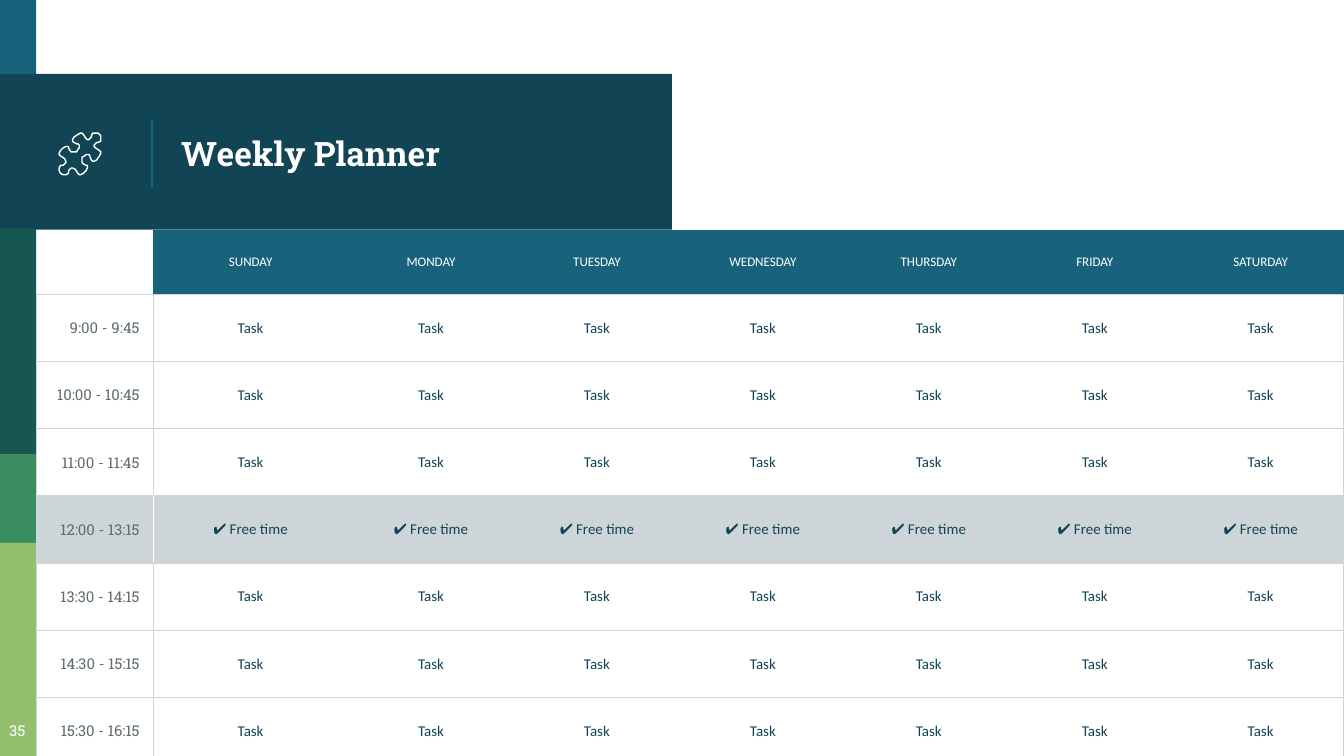
from lxml import etree
from pptx import Presentation
from pptx.dml.color import RGBColor
from pptx.enum import shapes, text
from pptx.oxml import ns
from pptx.util import Inches, Pt

BLUE, NAVY, GRAY, SLATE, WHITE = "18637B", "114454", "CED5D8", "5F6C70", "FFFFFF"
SERIF, SANS = "Roboto Slab", "Calibri"
CENTER, RIGHT = text.PP_ALIGN.CENTER, text.PP_ALIGN.RIGHT
NO_GRID_STYLE = "{2D5ABB26-0587-4C30-8999-92F81FD0307C}"

# left, top, width, height, colour
BANDS = [
    (0, 0, 0.27, 0.58, BLUE),
    (0, 0.55, 5, 1.16, NAVY),
    (0, 1.7, 0.27, 1.68, "165751"),
    (0, 3.38, 0.27, 0.66, "3B8D61"),
    (0, 4.04, 0.27, 1.59, "94BF6E"),
]
DAYS = ["SUNDAY", "MONDAY", "TUESDAY", "WEDNESDAY", "THURSDAY", "FRIDAY", "SATURDAY"]
BREAK = "12:00 - 13:15"
TIMES = ["9:00 - 9:45", "10:00 - 10:45", "11:00 - 11:45", BREAK,
         "13:30 - 14:15", "14:30 - 15:15", "15:30 - 16:15"]

# Half of the puzzle outline, in hundredths of an inch; the rest is its mirror.
PUZZLE_SIZE = 31
PUZZLE_HALF = [
    (30, 1), (29, 0), (27, 0), (25, 0), (24, 2), (24, 3), (23, 4), (22, 5),
    (21, 5), (20, 4), (18, 1), (17, 0), (16, 0), (14, 1), (11, 3), (10, 5),
    (10, 6), (11, 7), (13, 8), (14, 8), (15, 9), (15, 11), (14, 12), (13, 14),
    (11, 14), (9, 14), (8, 13), (7, 11), (7, 10), (6, 10), (5, 10), (3, 11),
    (1, 13), (0, 15), (0, 16), (1, 17), (4, 19), (5, 21), (5, 22), (4, 23),
    (3, 24), (1, 24), (0, 26), (0, 27), (0, 28), (1, 30),
]


def rgb(color):
    return RGBColor.from_string(color)


def add_band(slide, left, top, width, height, color):
    band = slide.shapes.add_shape(shapes.MSO_SHAPE.RECTANGLE, Inches(left),
                                  Inches(top), Inches(width), Inches(height))
    band.shadow.inherit = False
    band.fill.solid()
    band.fill.fore_color.rgb = rgb(color)
    band.line.fill.background()


def add_divider(slide, x, top, bottom):
    divider = slide.shapes.add_connector(shapes.MSO_CONNECTOR.STRAIGHT, Inches(x),
                                         Inches(top), Inches(x), Inches(bottom))
    divider.line.color.rgb = rgb(BLUE)
    divider.line.width = Pt(0.75)
    etree.SubElement(divider._element.spPr, ns.qn("a:effectLst"))


def add_puzzle(slide, left, top):
    mirrored = [(PUZZLE_SIZE - y, PUZZLE_SIZE - x) for x, y in reversed(PUZZLE_HALF)]
    outline = PUZZLE_HALF + mirrored
    builder = slide.shapes.build_freeform(*outline[0], scale=Inches(0.01))
    builder.add_line_segments(outline[1:], close=True)
    puzzle = builder.convert_to_shape(Inches(left), Inches(top))
    puzzle.shadow.inherit = False
    puzzle.fill.background()
    puzzle.line.color.rgb = rgb(WHITE)
    puzzle.line.width = Pt(0.75)


def set_text(text_frame, words, size, font, color, align=None, bold=False):
    text_frame.text = words
    paragraph = text_frame.paragraphs[0]
    paragraph.alignment = align
    for run in paragraph.runs:
        run.font.size = Pt(size)
        run.font.name = font
        run.font.bold = bold
        run.font.color.rgb = rgb(color)


def set_margins(target):
    target.margin_left = target.margin_right = Inches(0.1)
    target.margin_top = target.margin_bottom = Inches(0.1)


def add_label(slide, left, top, width, height, anchor, *style, **options):
    label = slide.shapes.add_textbox(Inches(left), Inches(top),
                                     Inches(width), Inches(height))
    frame = label.text_frame
    frame.word_wrap = True
    frame.vertical_anchor = anchor
    set_margins(frame)
    set_text(frame, *style, **options)


def set_borders(cell, **sides):
    """Draw the given sides (L, R, T, B), each in its own colour, and clear the others."""
    properties = cell._tc.get_or_add_tcPr()
    for side in "LRTB":
        line = etree.SubElement(properties, ns.qn("a:ln" + side), w=str(Pt(0.75)))
        if side in sides:
            fill = etree.SubElement(line, ns.qn("a:solidFill"))
            etree.SubElement(fill, ns.qn("a:srgbClr"), val=sides[side])
        else:
            etree.SubElement(line, ns.qn("a:noFill"))


def fill_cell(cell, color, *style):
    cell.vertical_anchor = text.MSO_ANCHOR.MIDDLE
    set_margins(cell)
    set_text(cell.text_frame, *style)
    if color:
        cell.fill.solid()
        cell.fill.fore_color.rgb = rgb(color)
    else:
        cell.fill.background()


def add_planner(slide, left, top):
    time_width, sunday_width = 0.87, 1.45
    day_width = (10 - left - time_width - sunday_width) / (len(DAYS) - 1)
    widths = [time_width, sunday_width] + [day_width] * (len(DAYS) - 1)
    heights = [0.48] + [0.5] * len(TIMES)
    frame = slide.shapes.add_table(len(heights), len(widths), Inches(left), Inches(top),
                                   Inches(sum(widths)), Inches(sum(heights)))
    table = frame.table
    table.first_row = table.horz_banding = False
    table._tbl.tblPr.find(ns.qn("a:tableStyleId")).text = NO_GRID_STYLE
    for column, width in zip(table.columns, widths):
        column.width = Inches(width)
    for row, height in zip(table.rows, heights):
        row.height = Inches(height)

    set_borders(table.cell(0, 0), B=GRAY)
    table.cell(0, 0).fill.background()
    for column, day in enumerate(DAYS, 1):
        cell = table.cell(0, column)
        set_borders(cell, B=GRAY)
        fill_cell(cell, BLUE, day, 7, SANS, WHITE, CENTER)

    for row, time in enumerate(TIMES, 1):
        is_break = time == BREAK
        color, inner = (GRAY, WHITE) if is_break else (None, GRAY)
        task = "✔ Free time" if is_break else "Task"
        cell = table.cell(row, 0)
        set_borders(cell, L=GRAY, R=inner, T=GRAY, B=GRAY)
        fill_cell(cell, color, time, 8, SERIF, SLATE, RIGHT)
        for column in range(1, len(widths)):
            sides = {"T": GRAY, "B": GRAY}
            if column == 1:
                sides["L"] = inner
            if column == len(DAYS):
                sides["R"] = GRAY
            cell = table.cell(row, column)
            set_borders(cell, **sides)
            fill_cell(cell, color, task, 8, SANS, NAVY, CENTER)


def main():
    presentation = Presentation()
    presentation.slide_width = Inches(10)
    presentation.slide_height = Inches(10) * 9 // 16
    slide = presentation.slides.add_slide(presentation.slide_layouts[6])
    for band in BANDS:
        add_band(slide, *band)
    add_divider(slide, 1.13, 0.89, 1.4)
    add_label(slide, 1.25, 0.58, 3.51, 1.12, text.MSO_ANCHOR.MIDDLE,
              "Weekly Planner", 18, SERIF, WHITE, bold=True)
    add_label(slide, -0.06, 5.3, 0.38, 0.35, text.MSO_ANCHOR.TOP,
              "35", 8, SERIF, WHITE, CENTER)
    add_planner(slide, 0.27, 1.71)
    add_puzzle(slide, 0.44, 0.99)
    presentation.save("out.pptx")


if __name__ == "__main__":
    main()
